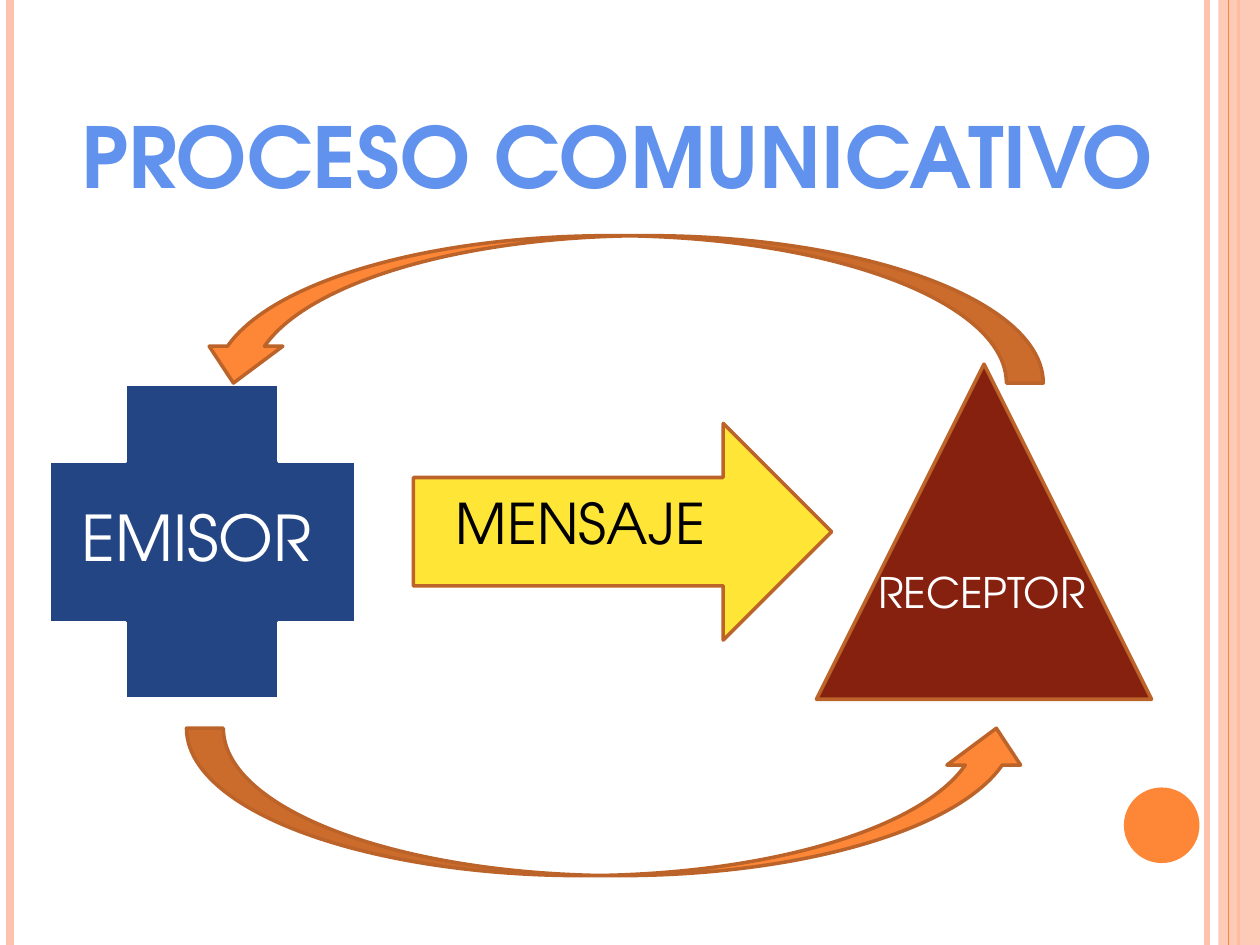
from pptx import Presentation
from pptx.dml.color import RGBColor
from pptx.enum.shapes import MSO_SHAPE as Kind, MSO_CONNECTOR as Link
from pptx.enum.text import PP_ALIGN as Align
from pptx.oxml.ns import qn
from pptx.util import Inches, Pt
from lxml.etree import SubElement

HUES = {"peach": "FEC3AE", "orange": "FE8637", "rust": "BC6329", "brick": "862110",
        "yellow": "FFE636", "navy": "244583", "sky": "6192ED",
        "white": "FFFFFF", "black": "000000"}
FONT = "TeX Gyre Adventor"

deck = Presentation()
deck.slide_width, deck.slide_height = Inches(10), Inches(7.5)
slide = deck.slides.add_slide(deck.slide_layouts[6])
shapes = slide.shapes


def add_form(kind, box, fill, edge=None):
    form = shapes.add_shape(kind, *map(Inches, box))
    form.shadow.inherit = False
    form.fill.solid()
    form.fill.fore_color.rgb = RGBColor.from_string(HUES[fill])
    if edge:
        form.line.color.rgb = RGBColor.from_string(HUES[edge])
        form.line.width = Pt(2)
    else:
        form.line.fill.background()
    return form


def add_label(text, box, size, hue, wrap=True):
    frame = shapes.add_textbox(*map(Inches, box)).text_frame
    frame.word_wrap = wrap
    para = frame.paragraphs[0]
    para.text = text
    para.font.name, para.font.size = FONT, Pt(size)
    para.font.color.rgb = RGBColor.from_string(HUES[hue])
    return para


# Side stripes, with the translucent band above the first three
for x, hue, width in [(9.58, "peach", 3), (0.08, "peach", 4.5),
                      (9.83, "orange", 1.5), (9.75, "orange", 0.75)]:
    if x == 9.75:
        band = add_form(Kind.RECTANGLE, (9.67, 0, 0.33, 7.5), "peach")
        tint = band.fill._xPr.find(".//" + qn("a:srgbClr"))
        SubElement(tint, qn("a:alpha"), val="87000")
    stripe = shapes.add_connector(Link.STRAIGHT, Inches(x), 0, Inches(x), Inches(7.5))
    stripe.line.color.rgb = RGBColor.from_string(HUES[hue])
    stripe.line.width = Pt(width)
    SubElement(stripe._element.spPr, qn("a:effectLst"))
add_form(Kind.OVAL, (8.92, 6.25, 0.6, 0.6), "orange")

# Sender, message and receiver
add_form(Kind.ISOSCELES_TRIANGLE, (6.48, 2.89, 2.66, 2.66), "brick", "rust")
add_form(Kind.RIGHT_ARROW, (3.28, 3.36, 3.32, 1.72), "yellow", "rust")
add_label("MENSAJE", (3.52, 3.83, 2.22, 0.64), 32, "black")
add_form(Kind.CROSS, (0.39, 3.05, 2.43, 2.5), "navy", "white")
add_label("EMISOR", (0.55, 3.91, 2.2, 0.71), 36, "white")
add_label("RECEPTOR", (6.87, 4.45, 1.88, 0.5), 24, "white", wrap=False)

# Title
title = add_label("PROCESO COMUNICATIVO", (0.47, 0.78, 8.86, 0.91), 48, "sky", wrap=False)
title.alignment = Align.CENTER
title.font.bold = True

# Feedback loop
for x, y, turn in [(1.48, 5.78, 0), (1.56, 1.87, 180)]:
    loop = add_form(Kind.CURVED_UP_ARROW, (x, y, 6.72, 1.17), "orange", "rust")
    loop.rotation = turn

deck.save("out.pptx")
